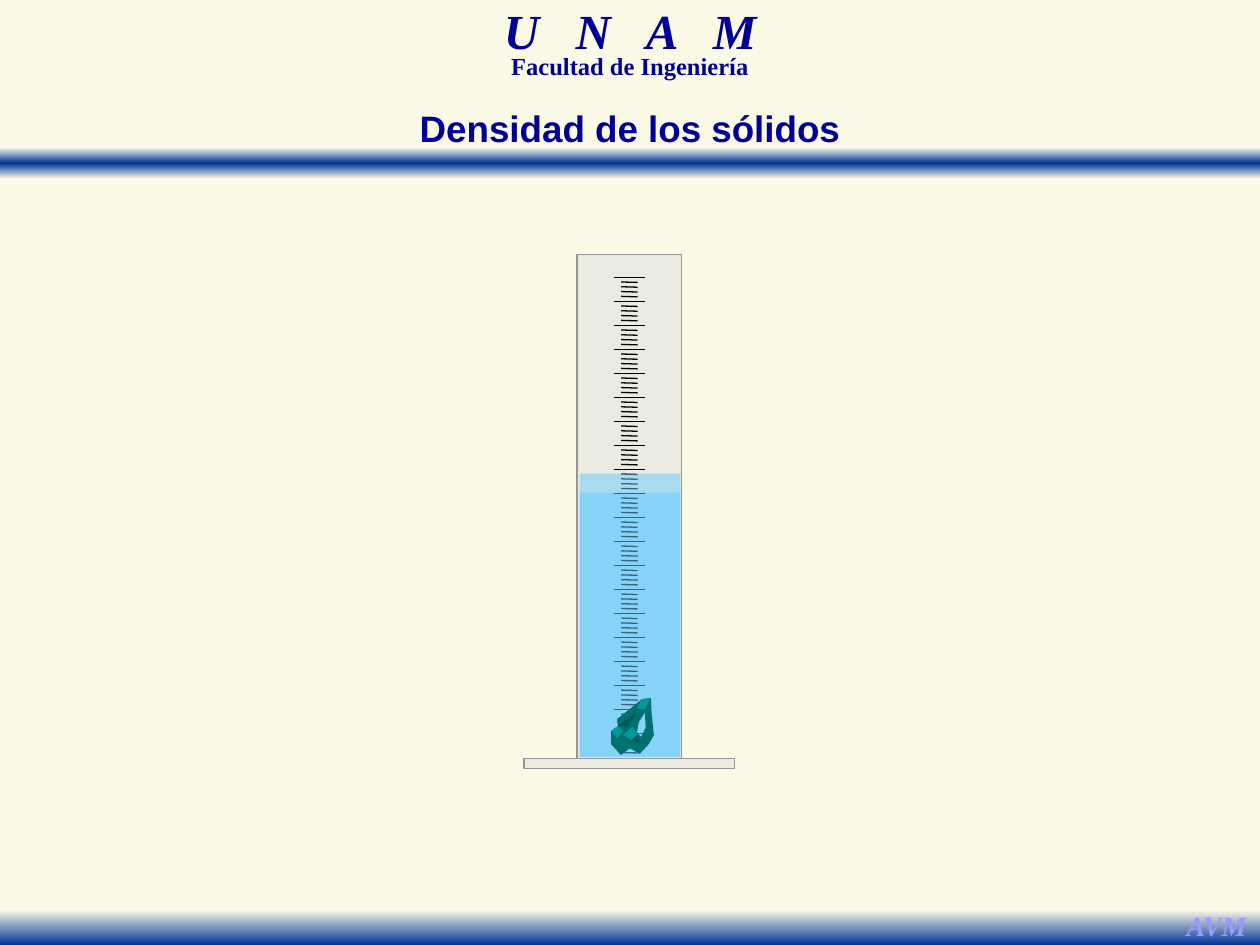
import pptx
import pptx.dml.color
import pptx.enum.shapes
import pptx.enum.text
import pptx.oxml
import pptx.oxml.ns
import pptx.util
from lxml import etree

COLORS = {
    "cream": "FAFAE6", "band": "003399", "navy": "000099", "lilac": "9999FF",
    "glass": "DDDDDD", "edge": "969696", "water": "66CCFF", "tick": "000000",
    "rock": "007070", "rock_light": "009999", "rock_dark": "005858",
}

# Boxes are left, top, width, height in percent of the slide
BANDS = [
    ((0, 15.6, 100, 3.33), [(0, "cream"), (50, "band"), (100, "cream")]),
    ((0, 96.27, 100, 3.73), [(0, "cream"), (100, "band")]),
]
SERIF = "Times New Roman"
# Box, runs with letter spacing in points, line spacing, wrap, colour, font
LABELS = [
    ((30.4, 1.07, 39.2, 5.73), [("U N A ", 7), ("M", 0)], 0.7, True, "navy",
     {"name": SERIF, "size": pptx.util.Pt(28), "bold": True, "italic": True}),
    ((32.1, 5.6, 35.8, 3.47), [("Facultad de Ingeniería", 0)], 0.7, True, "navy",
     {"name": SERIF, "size": pptx.util.Pt(14), "bold": True}),
    ((93.1, 95.47, 6.9, 4.93), [("AVM", 0)], 1.0, False, "lilac",
     {"name": SERIF, "size": pptx.util.Pt(16), "bold": True, "italic": True}),
]
TITLE = ((32.1, 10.53, 35.8, 6), [("Densidad de los sólidos", 0)], 1.0, False, "navy",
         {"name": "Arial", "size": pptx.util.Pt(21), "bold": True})

GLASS = [(45.8, 26.93, 8.3, 53.33), (41.6, 80.27, 16.7, 1.07)]
WATER_BEFORE = (46, 52.13, 8, 28)
WATER_AFTER = (46, 50.13, 8, 30)
SCALE = {"first": 29.33, "last_major": 77.6, "majors": 20, "per_major": 5,
         "major_x": (48.7, 51.2), "minor_x": (49.3, 50.6)}

# Rock outlines, in percent of the rock's own box
ROCK_BOX = (48.5, 73.87, 3.4, 6.03)
ROCK = [
    ("rock", [
        [(0, 58), (16, 49), (14, 37), (44, 19), (72, 2), (93, 0), (95, 30),
         (100, 65), (88, 81), (67, 98), (44, 88), (23, 100), (0, 81)],
        [(79, 25), (81, 52), (70, 68), (60, 60), (65, 42)],
    ]),
    ("rock_light", [
        [(60, 18), (72, 2), (93, 0), (78, 20)],
        [(28, 65), (50, 50), (62, 64), (48, 74)],
        [(0, 58), (16, 49), (28, 58), (14, 70)],
    ]),
    ("rock_dark", [[(16, 49), (60, 25), (40, 50)], [(48, 74), (62, 64), (67, 78)]]),
]

presentation = pptx.Presentation()
presentation.slide_width = pptx.util.Inches(10)
presentation.slide_height = pptx.util.Inches(7.5)
slide = presentation.slides.add_slide(presentation.slide_layouts[5])


def color(name):
    return pptx.dml.color.RGBColor.from_string(COLORS[name])


def across(share):
    return round(presentation.slide_width * share / 100)


def down(share):
    return round(presentation.slide_height * share / 100)


def place(box):
    left, top, width, height = box
    return across(left), down(top), across(width), down(height)


def add_rectangle(shapes, box, fill, line=None, alpha=None):
    shape = shapes.add_shape(pptx.enum.shapes.MSO_SHAPE.RECTANGLE, *place(box))
    paint(shape, fill, line)
    if alpha:
        solid = shape.fill._xPr.find(".//" + pptx.oxml.ns.qn("a:srgbClr"))
        etree.SubElement(solid, pptx.oxml.ns.qn("a:alpha"), val=str(alpha * 1000))
    return shape


def paint(shape, fill, line=None):
    shape.shadow.inherit = False
    shape.fill.solid()
    shape.fill.fore_color.rgb = color(fill)
    if line:
        shape.line.color.rgb = color(line)
        shape.line.width = pptx.util.Pt(0.75)
    else:
        shape.line.fill.background()


def set_gradient(shape, stops):
    marks = "".join(
        f'<a:gs pos="{position * 1000}"><a:srgbClr val="{COLORS[name]}"/></a:gs>'
        for position, name in stops)
    gradient = pptx.oxml.parse_xml(
        f'<a:gradFill {pptx.oxml.ns.nsdecls("a")} rotWithShape="1">'
        f'<a:gsLst>{marks}</a:gsLst><a:lin ang="5400000" scaled="0"/></a:gradFill>')
    solid = shape._element.spPr.find(pptx.oxml.ns.qn("a:solidFill"))
    solid.getparent().replace(solid, gradient)


def write_label(shape, runs, line_spacing, wrap, fill, font_values):
    frame = shape.text_frame
    frame.word_wrap = wrap
    frame.auto_size = pptx.enum.text.MSO_AUTO_SIZE.SHAPE_TO_FIT_TEXT
    frame.vertical_anchor = pptx.enum.text.MSO_ANCHOR.TOP
    paragraph = frame.paragraphs[0]
    paragraph.alignment = pptx.enum.text.PP_ALIGN.CENTER
    paragraph.line_spacing = line_spacing
    paragraph.space_before = pptx.util.Pt(0)
    for text, spacing in runs:
        run = paragraph.add_run()
        run.text = text
        for name, value in font_values.items():
            setattr(run.font, name, value)
        run.font.color.rgb = color(fill)
        if spacing:
            run.font._element.set("spc", str(spacing * 100))


def add_tick(shapes, ends, top, drop):
    line = shapes.add_connector(
        pptx.enum.shapes.MSO_CONNECTOR.STRAIGHT,
        across(ends[0]), down(top), across(ends[1]), down(top + drop))
    line.line.color.rgb = color("tick")
    line.line.width = pptx.util.Pt(0.75)
    etree.SubElement(line._element.spPr, pptx.oxml.ns.qn("a:effectLst"))


def add_outline(shapes, box, fill, contours):
    left, top, width, height = place(box)
    builder = shapes.build_freeform(*contours[0][0], scale=(width / 100, height / 100))
    for number, contour in enumerate(contours):
        if number:
            builder.move_to(*contour[0])
        builder.add_line_segments(contour[1:], close=True)
    paint(builder.convert_to_shape(left, top), fill)


# Background, bands and heading
slide.background.fill.solid()
slide.background.fill.fore_color.rgb = color("cream")
for box, stops in BANDS:
    set_gradient(add_rectangle(slide.shapes, box, "band"), stops)
for box, *label in LABELS:
    write_label(slide.shapes.add_textbox(*place(box)), *label)
title = slide.shapes.title
title.left, title.top, title.width, title.height = place(TITLE[0])
write_label(title, *TITLE[1:])

# Measuring cylinder with its first water level
cylinder = slide.shapes.add_group_shape().shapes
for box in GLASS:
    add_rectangle(cylinder, box, "glass", "edge", alpha=50)
add_rectangle(cylinder, WATER_BEFORE, "water", alpha=50)

# Graduated scale: every fifth tick is long
step = (SCALE["last_major"] - SCALE["first"]) / (SCALE["majors"] - 1) / SCALE["per_major"]
for number in range(SCALE["majors"] * SCALE["per_major"]):
    is_major = number % SCALE["per_major"] == 0
    add_tick(cylinder, SCALE["major_x" if is_major else "minor_x"],
             SCALE["first"] + number * step, 0 if is_major else step / 10)

# Raised water and the sunken rock
sample = slide.shapes.add_group_shape().shapes
add_rectangle(sample, WATER_AFTER, "water", alpha=50)
for fill, contours in ROCK:
    # Each facet set keeps its offset inside the rock's box
    add_outline(sample, ROCK_BOX, fill, contours)

presentation.save("out.pptx")
